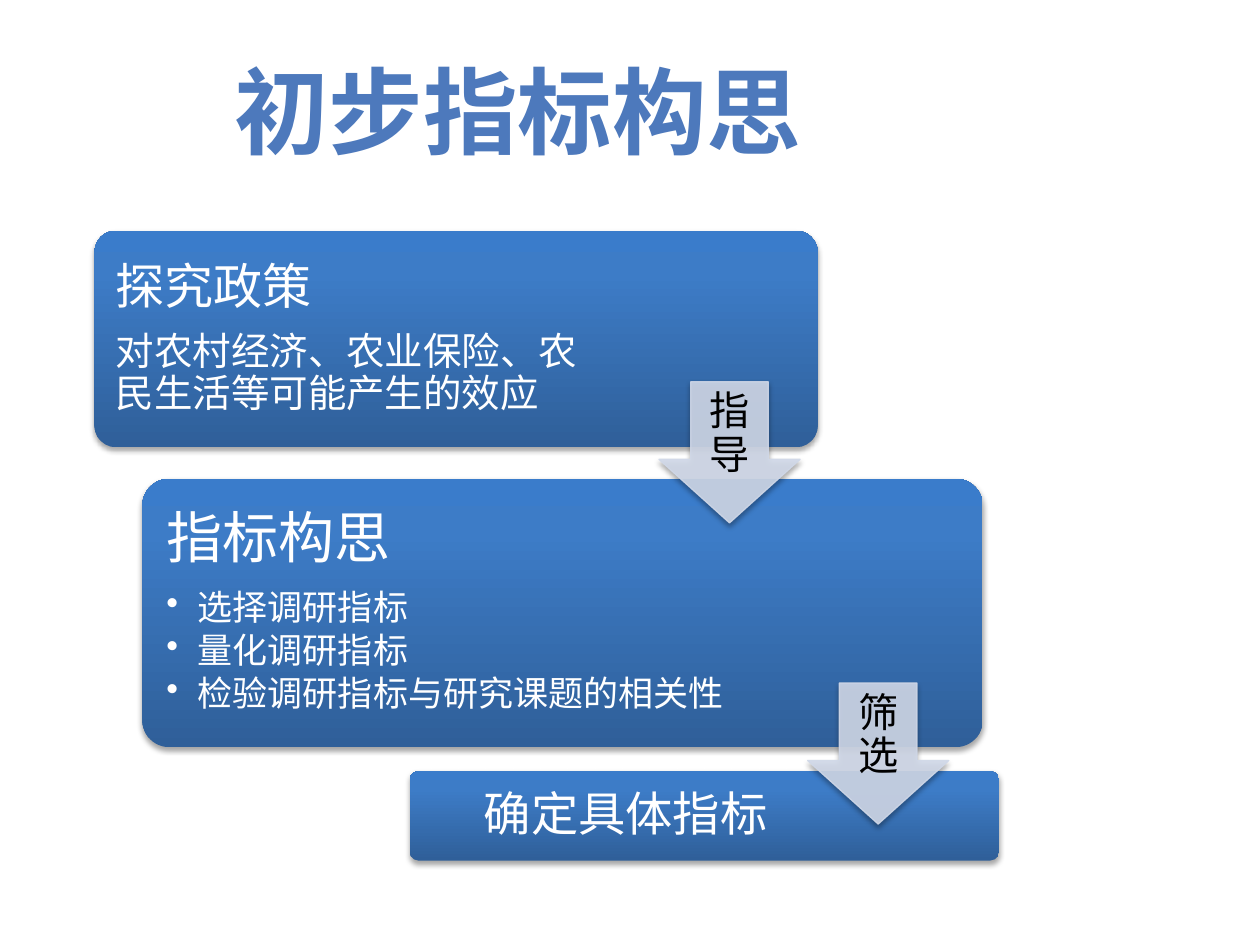
from lxml.etree import SubElement
from pptx import Presentation
from pptx.dml.color import RGBColor
from pptx.enum.shapes import MSO_SHAPE as Shape
from pptx.enum.text import MSO_ANCHOR as Anchor, PP_ALIGN as Align
from pptx.oxml.ns import qn
from pptx.util import Inches, Pt

WHITE = RGBColor(0xFF, 0xFF, 0xFF)
BLACK = RGBColor(0, 0, 0)
BLUE = RGBColor(0x4D, 0x79, 0xBC)
PALE = RGBColor(0xD0, 0xD8, 0xE8)
STOPS = [
    (0, RGBColor(0x2F, 0x5F, 0x99)),
    (80, RGBColor(0x3D, 0x7C, 0xC7)),
    (100, RGBColor(0x3A, 0x7C, 0xCB)),
]


def add(parent, tag, **attrs):
    return SubElement(parent, qn(tag), {k: str(v) for k, v in attrs.items()})


def tint(parent, color, alpha):
    """Add a colour with its opacity in percent."""
    node = add(parent, "a:srgbClr", val=color)
    if alpha < 100:
        add(node, "a:alpha", val=alpha * 1000)


class Deck:
    font = "Calibri"
    title_font = "Noto Sans CJK JP"

    def __init__(self):
        self.prs = Presentation()
        self.prs.slide_width = Inches(10)
        self.prs.slide_height = Inches(7.5)
        self.slide = self.prs.slides.add_slide(self.prs.slide_layouts[6])

    def shape(self, kind, at, adjust):
        """Add a preset shape with the soft shadow below it."""
        shape = self.slide.shapes.add_shape(kind, *map(Inches, at))
        for i, value in enumerate(adjust):
            shape.adjustments[i] = value
        shape.shadow.inherit = False
        glow = add(shape.element.spPr.find(qn("a:effectLst")), "a:outerShdw",
                   blurRad=Pt(3.1), dist=Pt(1.8), dir=90 * 60000,
                   rotWithShape=0)
        tint(glow, BLACK, 35)
        return shape

    def panel(self, *at):
        panel = self.shape(Shape.ROUNDED_RECTANGLE, at, [0.1])
        panel.line.fill.background()
        panel.fill.gradient()
        panel.fill.gradient_angle = 90
        stops = panel.element.spPr.find(".//" + qn("a:gsLst"))
        stops.clear()
        for pos, color in STOPS:
            tint(add(stops, "a:gs", pos=pos * 1000), color, 100)

    def arrow(self, left, top, label):
        arrow = self.shape(Shape.DOWN_ARROW, (left, top, 1.12, 1.12),
                           [0.55, 0.45])
        arrow.fill.solid()
        arrow.fill.fore_color.rgb = PALE
        arrow.line.color.rgb = PALE
        arrow.line.width = Pt(0.75)
        for node in arrow.element.spPr.findall(".//" + qn("a:solidFill")):
            add(node[0], "a:alpha", val=90000)
        self.text((left + 0.25, top, 0.62, 0.84), [(label, 23)], 0.03,
                  BLACK, Align.CENTER)

    def text(self, at, lines, inset, color=WHITE, align=Align.LEFT, points=()):
        """Add lines of (text, size), then bullet points of the same form."""
        frame = self.slide.shapes.add_textbox(*map(Inches, at)).text_frame
        frame.word_wrap = True
        frame.vertical_anchor = Anchor.MIDDLE
        frame.margin_left = frame.margin_right = Inches(inset)
        frame.margin_top = frame.margin_bottom = Inches(inset)
        rows = [*lines, *points]
        frame.text = "\n".join(row[0] for row in rows)
        for i, (para, (_, size)) in enumerate(zip(frame.paragraphs, rows)):
            bullet = i >= len(lines)
            para.alignment = align
            para.line_spacing = 0.9
            self.after(para, 15 if bullet else 35)
            if bullet:
                self.bullet(para)
            self.style(para.runs[0].font, size, color, self.font)

    def after(self, para, percent):
        """Set the space after as a share of the text size."""
        para.space_after = Pt(0)
        space = para._p.pPr.find(qn("a:spcAft"))
        space.clear()
        add(space, "a:spcPct", val=percent * 1000)

    def bullet(self, para):
        para.level = 1
        props = para._p.pPr
        props.set("marL", str(Inches(0.25)))
        props.set("indent", str(-Inches(0.25)))
        add(props, "a:buChar", char="•")

    def style(self, font, size, color, name):
        font.size = Pt(size)
        font.name = name
        font.color.rgb = color

    def title(self, text, *at):
        frame = self.slide.shapes.add_textbox(*map(Inches, at)).text_frame
        frame.word_wrap = False
        frame.text = text
        run = frame.paragraphs[0].runs[0]
        self.style(run.font, 54, BLUE, self.title_font)
        run.font.bold = True
        add(run._r.rPr, "a:ea", typeface=self.title_font)


def main():
    deck = Deck()
    deck.panel(0.75, 1.83, 5.74, 1.72)
    deck.text((0.8, 1.88, 4.02, 1.62), [
        ("探究政策", 28),
        ("对农村经济、农业保险、农民生活等可能产生的效应", 22),
    ], 0.12)

    deck.panel(1.13, 3.8, 6.67, 2.13)
    points = ["选择调研指标", "量化调研指标", "检验调研指标与研究课题的相关性"]
    deck.text((1.19, 3.86, 4.76, 2), [("指标构思", 32)], 0.13,
              points=[(point, 20) for point in points])

    deck.panel(3.25, 6.12, 4.68, 0.71)
    deck.text((3.27, 6.14, 3.39, 0.67), [("确定具体指标", 27)], 0.11,
              align=Align.CENTER)

    deck.arrow(5.23, 3.03, "指导")
    deck.arrow(6.41, 5.42, "筛选")
    deck.title("初步指标构思", 1.76, 0.37, 4.75, 1.01)
    deck.prs.save("out.pptx")


if __name__ == "__main__":
    main()
